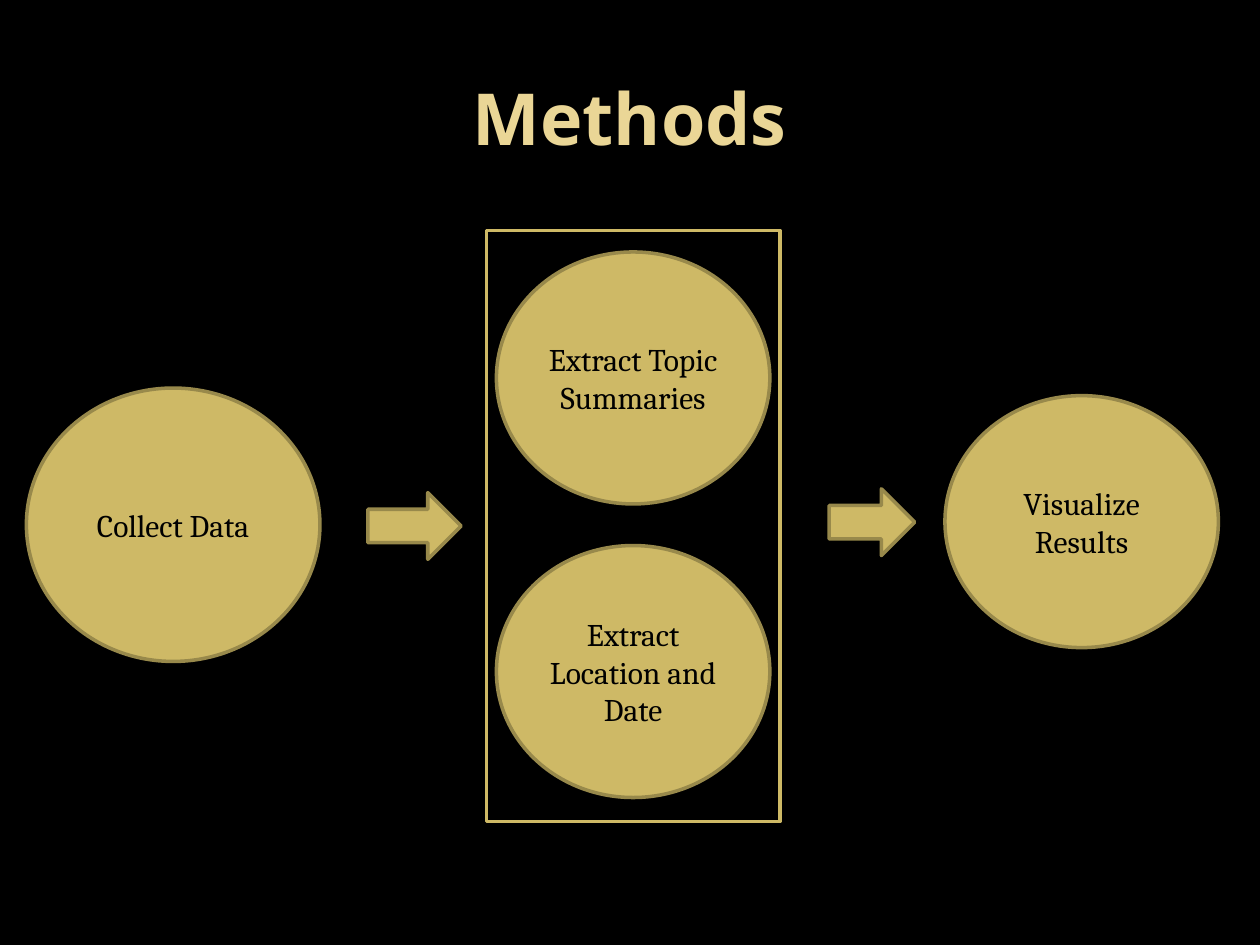
from pptx import Presentation
from pptx.dml.color import RGBColor
from pptx.enum import shapes, text
from pptx.util import Inches, Pt

BLACK = RGBColor(0x00, 0x00, 0x00)
GOLD = RGBColor(0xCE, 0xB9, 0x66)
DARK_GOLD = RGBColor(0x98, 0x89, 0x4B)
PALE_GOLD = RGBColor(0xEA, 0xD6, 0x96)

# Left, top, width, height in inches
STEPS = [
    ("Collect Data", (0.21, 3.08, 2.33, 2.17)),
    ("Extract Topic Summaries", (3.94, 2, 2.17, 2)),
    ("Extract Location and Date", (3.94, 4.33, 2.17, 2)),
    ("Visualize Results", (7.5, 3.14, 2.17, 2)),
]
ARROWS = [(2.92, 3.91, 0.74, 0.53), (6.58, 3.88, 0.68, 0.53)]
EXTRACTION_FRAME = (3.86, 1.83, 2.33, 4.69)


def write(owner, words, font_name, size, color, bold=False):
    frame = owner.text_frame
    frame.word_wrap = True
    frame.vertical_anchor = text.MSO_ANCHOR.MIDDLE
    paragraph = frame.paragraphs[0]
    paragraph.alignment = text.PP_ALIGN.CENTER
    run = paragraph.add_run()
    run.text = words
    run.font.name = font_name
    run.font.size = Pt(size)
    run.font.bold = bold
    run.font.color.rgb = color


def add_figure(slide, kind, box, fill, line):
    figure = slide.shapes.add_shape(kind, *map(Inches, box))
    figure.shadow.inherit = False
    if fill is None:
        figure.fill.background()
    else:
        figure.fill.solid()
        figure.fill.fore_color.rgb = fill
    figure.line.color.rgb = line
    figure.line.width = Pt(2)
    return figure


def add_title(slide, words):
    title = slide.shapes.add_textbox(*map(Inches, (0.5, 0.3, 9, 1.25)))
    write(title, words, "Open Sans", 41, PALE_GOLD, bold=True)


def add_step(slide, words, box):
    step = add_figure(slide, shapes.MSO_SHAPE.OVAL, box, GOLD, DARK_GOLD)
    write(step, words, "Cambria", 18, BLACK)


def main():
    deck = Presentation()
    deck.slide_width, deck.slide_height = Inches(10), Inches(7.5)
    slide = deck.slides.add_slide(deck.slide_layouts[6])
    slide.background.fill.solid()
    slide.background.fill.fore_color.rgb = BLACK

    add_title(slide, "Methods")

    # Frame around the two extraction steps
    add_figure(slide, shapes.MSO_SHAPE.RECTANGLE, EXTRACTION_FRAME, None, GOLD)

    # Process steps and the arrows between them
    for words, box in STEPS:
        add_step(slide, words, box)
    for box in ARROWS:
        add_figure(slide, shapes.MSO_SHAPE.RIGHT_ARROW, box, GOLD, DARK_GOLD)

    deck.save("out.pptx")


if __name__ == "__main__":
    main()
